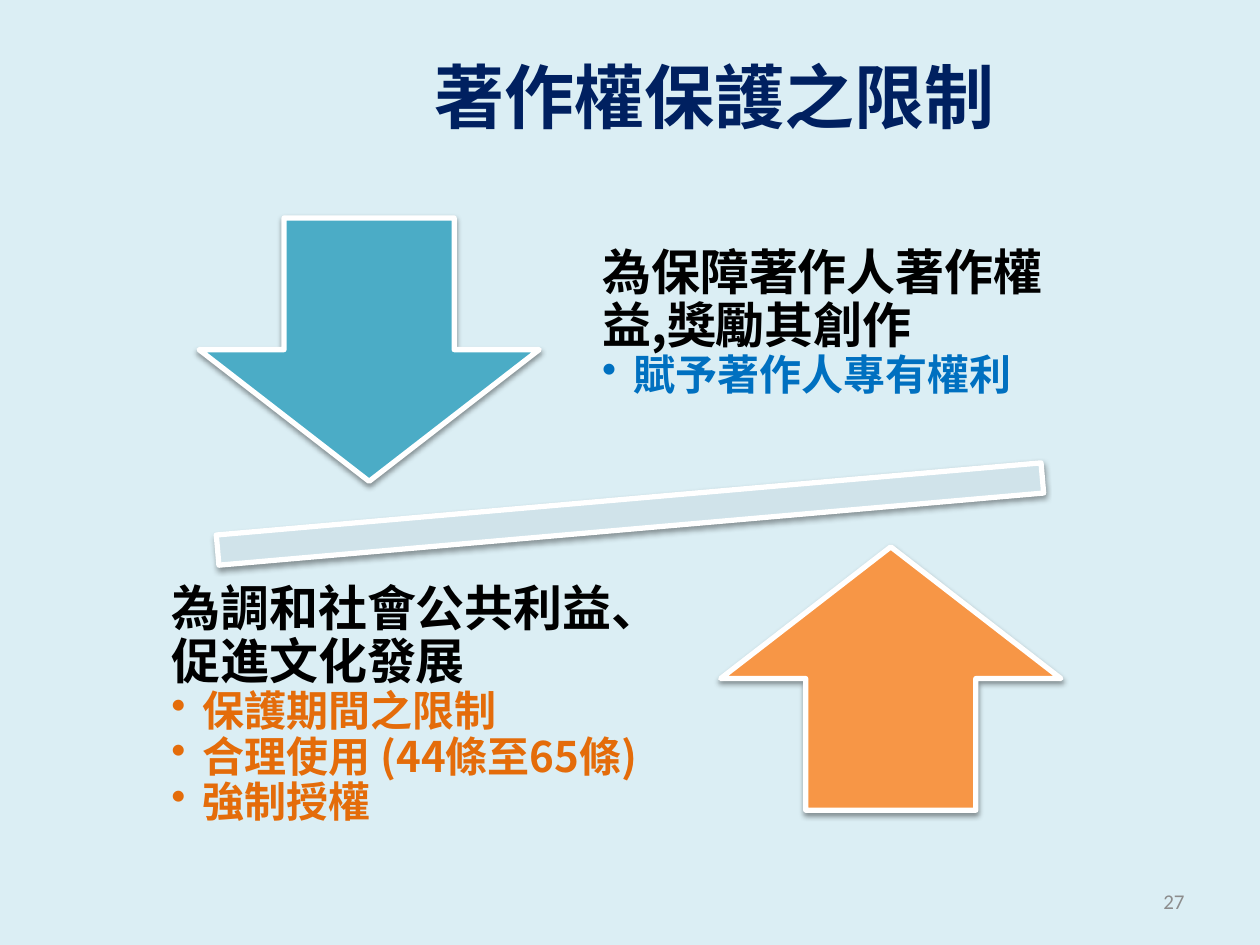
from dataclasses import dataclass

from lxml import etree
from pptx import Presentation
from pptx import util as u
from pptx.dml.color import RGBColor
from pptx.enum import shapes, text
from pptx.oxml import ns


@dataclass(frozen=True)
class Theme:
    cjk_font: str = "Noto Sans CJK SC"
    latin_font: str = "Calibri"
    background: str = "DBEEF4"
    title: str = "002060"
    heading: str = "000000"
    rights: str = "0070C0"
    limits: str = "E46C0A"
    page: str = "8C8C8C"
    down_arrow: str = "4BACC6"
    up_arrow: str = "F79646"
    beam: str = "D0E3EA"
    outline: str = "FFFFFF"
    shadow: str = "000000"
    title_size: int = 40
    heading_size: int = 28
    bullet_size: int = 24
    page_size: int = 12
    outline_width: int = 3


THEME = Theme()


def color(value):
    return RGBColor.from_string(value)


def place(left, top, width, height):
    return [u.Inches(length) for length in (left, top, width, height)]


def add_child(parent, tag, **attributes):
    return etree.SubElement(parent, ns.qn(tag), attributes)


def add_run(paragraph, words, size, fill, font=THEME.cjk_font, bold=True):
    run = paragraph.add_run()
    run.text = words
    run.font.size = u.Pt(size)
    run.font.bold = bold
    run.font.name = font
    run.font.color.rgb = color(fill)
    add_child(run.font._element, "a:ea", typeface=font)


def add_text_frame(slide, box, inset=None):
    frame = slide.shapes.add_textbox(*place(*box)).text_frame
    frame.word_wrap = True
    frame.vertical_anchor = text.MSO_ANCHOR.MIDDLE
    if inset is not None:
        frame.margin_left = frame.margin_right = u.Inches(inset)
        frame.margin_top = frame.margin_bottom = u.Inches(inset)
    return frame


def add_line(slide, box, words, alignment, **style):
    paragraph = add_text_frame(slide, box).paragraphs[0]
    paragraph.alignment = alignment
    add_run(paragraph, words, **style)


def set_bullet(paragraph):
    """Give the paragraph a round bullet with a hanging indent."""
    paragraph.level = 1
    properties = paragraph._p.get_or_add_pPr()
    properties.set("marL", str(u.Inches(0.25)))
    properties.set("indent", str(u.Inches(-0.25)))
    add_child(properties, "a:buChar", char="•")


def add_argument(slide, box, heading, bullets, bullet_color):
    """Add a bold heading followed by its bulleted consequences."""
    frame = add_text_frame(slide, box, inset=0.22)
    purpose = frame.paragraphs[0]
    purpose.line_spacing = 0.9
    add_run(purpose, heading, THEME.heading_size, THEME.heading)
    for words in bullets:
        consequence = frame.add_paragraph()
        consequence.line_spacing = 0.9
        set_bullet(consequence)
        add_run(consequence, words, THEME.bullet_size, bullet_color)


def add_soft_shadow(shape):
    shape.shadow.inherit = False
    effects = shape._element.spPr.find(ns.qn("a:effectLst"))
    shadow = add_child(effects, "a:outerShdw", blurRad="40000", dist="20000",
                       dir="5400000", rotWithShape="0")
    tint = add_child(shadow, "a:srgbClr", val=THEME.shadow)
    add_child(tint, "a:alpha", val="38000")


def add_balance_part(slide, preset, box, fill, rotation=0):
    part = slide.shapes.add_shape(preset, *place(*box))
    part.rotation = rotation
    part.fill.solid()
    part.fill.fore_color.rgb = color(fill)
    part.line.color.rgb = color(THEME.outline)
    part.line.width = u.Pt(THEME.outline_width)
    add_soft_shadow(part)


def main():
    deck = Presentation()
    deck.slide_width, deck.slide_height = u.Inches(10), u.Inches(7.5)
    slide = deck.slides.add_slide(deck.slide_layouts[6])
    slide.background.fill.solid()
    slide.background.fill.fore_color.rgb = color(THEME.background)

    add_line(slide, (2.4, 0.29, 6.54, 0.94), "著作權保護之限制",
             text.PP_ALIGN.CENTER, size=THEME.title_size, fill=THEME.title)

    preset = shapes.MSO_SHAPE
    add_balance_part(slide, preset.MATH_MINUS, (0.53, 3.57, 8.94, 1.02),
                     THEME.beam, rotation=355)
    add_balance_part(slide, preset.DOWN_ARROW, (1.58, 1.73, 2.7, 2.09),
                     THEME.down_arrow)
    add_argument(slide, (4.56, 1.47, 4.3, 2.2),
                 "為保障著作人著作權益,獎勵其創作",
                 ["賦予著作人專有權利"], THEME.rights)
    add_balance_part(slide, preset.UP_ARROW, (5.72, 4.34, 2.7, 2.09),
                     THEME.up_arrow)
    add_argument(slide, (1.14, 4.5, 4.3, 2.2),
                 "為調和社會公共利益、促進文化發展",
                 ["保護期間之限制", "合理使用 (44條至65條)", "強制授權"],
                 THEME.limits)

    add_line(slide, (7.17, 6.95, 2.33, 0.4), "27", text.PP_ALIGN.RIGHT,
             size=THEME.page_size, fill=THEME.page,
             font=THEME.latin_font, bold=False)
    deck.save("out.pptx")


if __name__ == "__main__":
    main()
